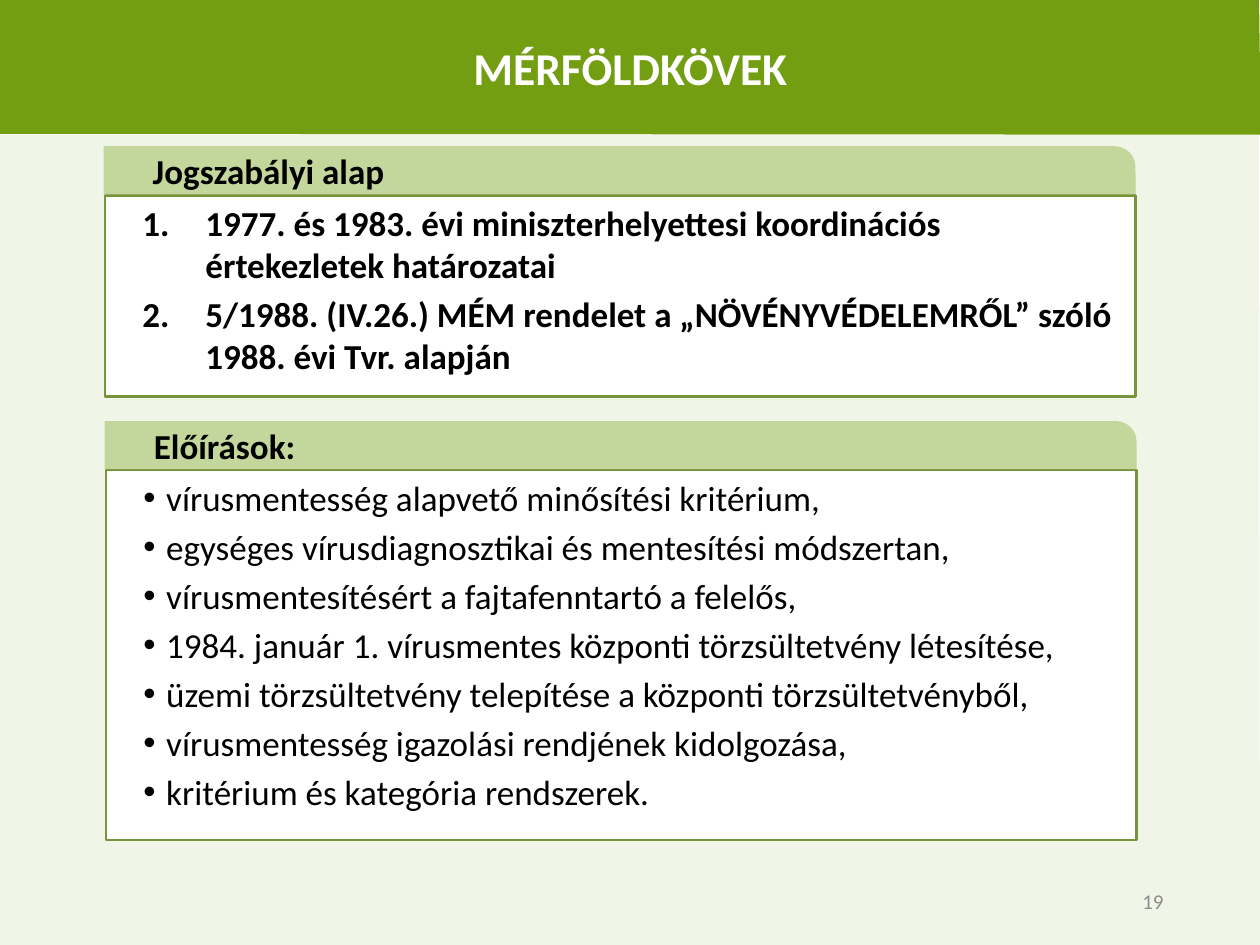
from dataclasses import dataclass

from lxml.etree import SubElement
from pptx import Presentation
from pptx.dml.color import RGBColor
from pptx.enum.shapes import MSO_SHAPE as Preset
from pptx.enum.text import MSO_ANCHOR as Anchor, PP_ALIGN as Align
from pptx.oxml.ns import qn
from pptx.util import Pt


@dataclass(frozen=True)
class Theme:
    font: str = "Calibri"
    title_size: int = 26
    body_size: int = 20
    number_size: int = 12
    band: str = "739E12"
    ground: str = "EBF1DE"
    ground_alpha: int = 70
    header: str = "C3D69B"
    border: str = "77933C"
    paper: str = "FFFFFF"
    ink: str = "000000"
    muted: str = "8C8C8C"


# Bullet kinds: left margin, first-line indent, bullet elements
NUMBERED = (50.4, -36, [("a:buFont", {"typeface": "+mj-lt"}),
                        ("a:buAutoNum", {"type": "arabicPeriod"})])
DOTTED = (27.4, -13, [("a:buFont", {"typeface": "Arial"}),
                      ("a:buChar", {"char": "•"})])
HEADING = (21, 0, [("a:buNone", {})])


class Painter:
    def __init__(self, page, theme):
        self.page = page
        self.theme = theme

    def style(self, shape, fill, line=None, alpha=None):
        shape.shadow.inherit = False
        shape.fill.solid()
        shape.fill.fore_color.rgb = RGBColor.from_string(fill)
        if alpha is not None:
            color = shape.fill._xPr.find(qn("a:solidFill"))[0]
            SubElement(color, qn("a:alpha"), val=str(alpha * 1000))
        if line:
            shape.line.color.rgb = RGBColor.from_string(line)
            shape.line.width = Pt(1.5)
        else:
            shape.line.fill.background()
        return shape

    def polygon(self, corners, fill, alpha=None):
        points = [(Pt(x), Pt(y)) for x, y in corners]
        builder = self.page.shapes.build_freeform(*points[0])
        builder.add_line_segments(points[1:], close=True)
        return self.style(builder.convert_to_shape(), fill, alpha=alpha)

    def block(self, preset, bounds, fill, line=None):
        shape = self.page.shapes.add_shape(preset, *map(Pt, bounds))
        return self.style(shape, fill, line)

    def set_text(self, shape, lines, size, color, bold=False, align=Align.LEFT,
                 anchor=Anchor.MIDDLE, bullet=None):
        frame = shape.text_frame
        frame.word_wrap = True
        frame.vertical_anchor = anchor
        values = {"name": self.theme.font, "size": Pt(size), "bold": bold}
        for index, text in enumerate(lines):
            para = frame.add_paragraph() if index else frame.paragraphs[0]
            para.alignment = align
            if index:
                para.space_before = Pt(size * 0.2)
            if bullet:
                margin, indent, marks = bullet
                props = para._p.get_or_add_pPr()
                props.set("marL", str(Pt(margin)))
                props.set("indent", str(Pt(indent)))
                for tag, attributes in marks:
                    SubElement(props, qn(tag), attributes)
            span = para.add_run()
            span.text = text
            for name, value in values.items():
                setattr(span.font, name, value)
            span.font.color.rgb = RGBColor.from_string(color)

    def label(self, bounds, text, size, color, align):
        box = self.page.shapes.add_textbox(*map(Pt, bounds))
        self.set_text(box, [text], size, color, align=align)

    def panel(self, left, top, height, heading, lines, bullet, bold=False):
        """A bordered list under a header strip with one round corner."""
        theme = self.theme
        body = self.block(Preset.RECTANGLE, (left + 0.7, top + 28, 589, height),
                          theme.paper, theme.border)
        self.set_text(body, lines, theme.body_size, theme.ink, bold,
                      anchor=Anchor.TOP, bullet=bullet)
        strip = self.block(Preset.ROUND_1_RECTANGLE, (left, top, 589.7, 27.5),
                           theme.header)
        strip.adjustments[0] = 0.43
        self.set_text(strip, [heading], theme.body_size, theme.ink, True,
                      bullet=HEADING)


def main():
    deck = Presentation()
    deck.slide_width, deck.slide_height = Pt(720), Pt(540)
    theme = Theme()
    painter = Painter(deck.slides.add_slide(deck.slide_layouts[6]), theme)

    # Background and title band
    painter.polygon([(-0.5, 77), (719.5, 77), (720, 540), (0, 540)],
                    theme.ground, theme.ground_alpha)
    band = painter.polygon([(0, -0.5), (719.5, 0), (720.5, 77), (0, 76.5)],
                           theme.band)
    painter.set_text(band, ["MÉRFÖLDKÖVEK"], theme.title_size, theme.paper,
                     True, Align.CENTER)

    # Page number
    painter.label((516, 500.5, 156, 28.75), "19", theme.number_size,
                  theme.muted, Align.RIGHT)

    # Panels
    painter.panel(59.2, 83.6, 115, "Jogszabályi alap", [
        "1977. és 1983. évi miniszterhelyettesi koordinációs értekezletek "
        "határozatai",
        "5/1988. (IV.26.) MÉM rendelet a „NÖVÉNYVÉDELEMRŐL” szóló 1988. évi "
        "Tvr. alapján",
    ], NUMBERED, bold=True)
    painter.panel(59.8, 240.6, 211.5, "Előírások:", [
        "vírusmentesség alapvető minősítési kritérium,",
        "egységes vírusdiagnosztikai és mentesítési módszertan,",
        "vírusmentesítésért a fajtafenntartó a felelős,",
        "1984. január 1. vírusmentes központi törzsültetvény létesítése,",
        "üzemi törzsültetvény telepítése a központi törzsültetvényből,",
        "vírusmentesség igazolási rendjének kidolgozása,",
        "kritérium és kategória rendszerek.",
    ], DOTTED)

    deck.save("out.pptx")


if __name__ == "__main__":
    main()
